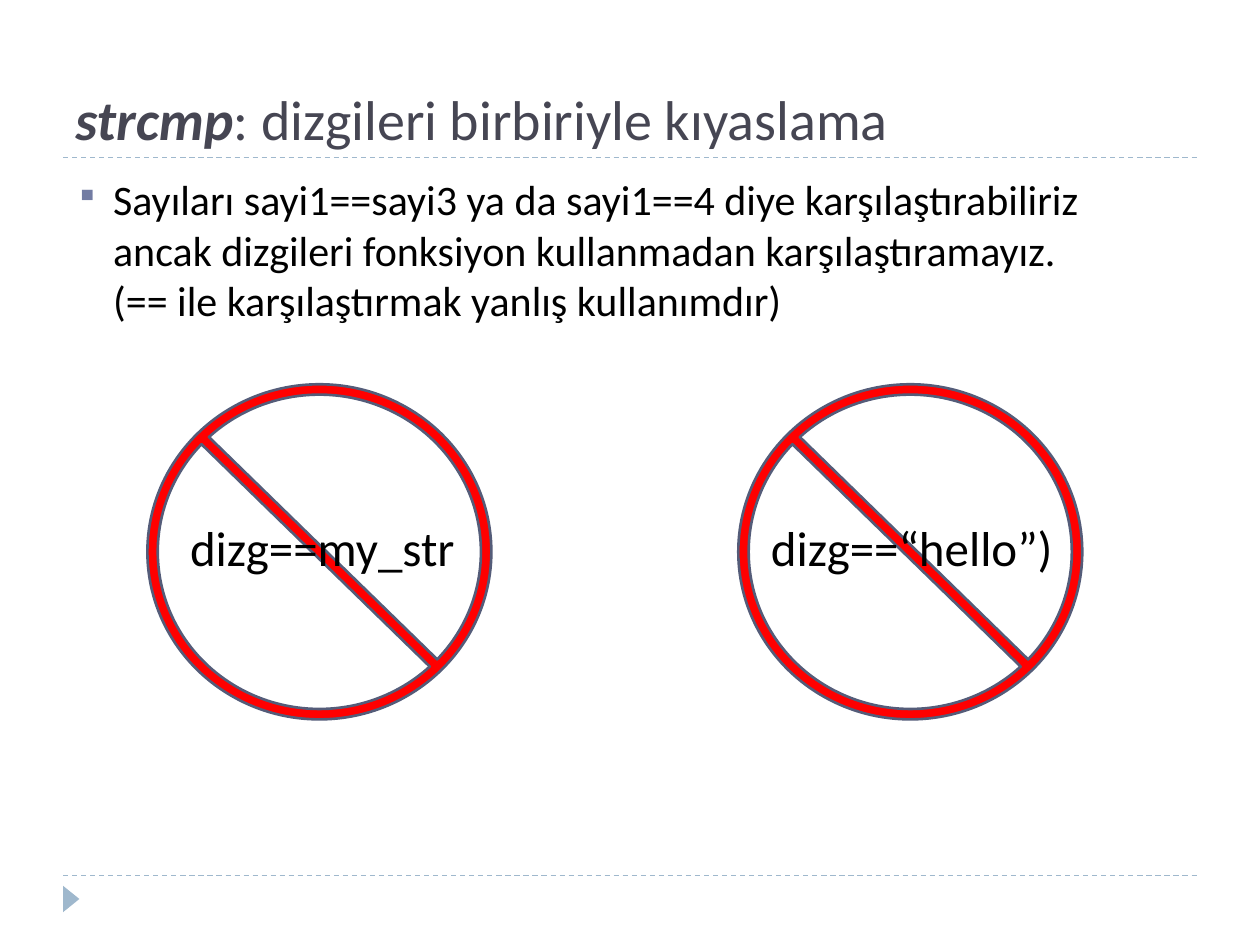
from lxml.etree import SubElement
from pptx import Presentation
from pptx.dml.color import RGBColor
from pptx.enum.dml import MSO_LINE
from pptx.enum.shapes import MSO_CONNECTOR, MSO_SHAPE
from pptx.enum.text import MSO_ANCHOR, MSO_AUTO_SIZE
from pptx.oxml.ns import qn
from pptx.util import Inches, Pt

COLORS = {
    "rule": "9FB8CD",
    "title": "464653",
    "body": "000000",
    "bullet": "727CA3",
    "ban": "FF0000",
    "ban_edge": "545C79",
}


class SlideBuilder:
    font_name = "Calibri"

    def __init__(self, slide):
        self.slide = slide

    def color(self, key):
        return RGBColor.from_string(COLORS[key])

    def rule(self, top):
        rule = self.slide.shapes.add_connector(
            MSO_CONNECTOR.STRAIGHT, Inches(0.5), Inches(top), Inches(9.5), Inches(top))
        rule.line.color.rgb = self.color("rule")
        rule.line.width = Pt(0.75)
        rule.line.dash_style = MSO_LINE.DASH
        SubElement(rule._element.spPr, qn("a:effectLst"))

    def shape(self, kind, box, fill, edge=None):
        shape = self.slide.shapes.add_shape(kind, *map(Inches, box))
        shape.shadow.inherit = False
        shape.fill.solid()
        shape.fill.fore_color.rgb = self.color(fill)
        if edge:
            shape.line.color.rgb = self.color(edge)
            shape.line.width = Pt(1.5)
        else:
            shape.line.fill.background()
        return shape

    def text(self, box, content, size, color="body", wrap=True, anchor=MSO_ANCHOR.TOP):
        frame = self.slide.shapes.add_textbox(*map(Inches, box)).text_frame
        frame.word_wrap = wrap
        frame.auto_size = MSO_AUTO_SIZE.NONE if wrap else MSO_AUTO_SIZE.SHAPE_TO_FIT_TEXT
        frame.vertical_anchor = anchor
        paragraph = frame.paragraphs[0]
        paragraph.text = content
        for run in paragraph.runs:
            self.style(run, size, color)
        return paragraph

    def style(self, run, size, color):
        run.font.name = self.font_name
        run.font.size = Pt(size)
        run.font.color.rgb = self.color(color)

    def title(self, term, rest):
        heading = self.text((0.5, 0.17, 9, 1.08), term, 32, "title", anchor=MSO_ANCHOR.BOTTOM)
        heading.runs[0].font.bold = True
        heading.runs[0].font.italic = True
        explanation = heading.add_run()
        explanation.text = rest
        self.style(explanation, 32, "title")

    def bullet(self, content):
        item = self.text((0.5, 1.33, 9, 5.4), content, 24)
        item.space_before = Pt(6)
        properties = item._p.get_or_add_pPr()
        properties.set("marL", str(Inches(0.3)))
        properties.set("indent", str(-Inches(0.3)))
        bullet_color = SubElement(properties, qn("a:buClr"))
        SubElement(bullet_color, qn("a:srgbClr"), val=COLORS["bullet"])
        SubElement(properties, qn("a:buSzPct"), val="76000")
        SubElement(properties, qn("a:buChar"), char="▪")

    def banned(self, sign_left, text_left, text_width, expression):
        sign = self.shape(MSO_SHAPE.NO_SYMBOL, (sign_left, 3.05, 2.73, 2.66), "ban", "ban_edge")
        sign.adjustments[0] = 0.031
        self.text((text_left, 4.06, text_width, 0.57), expression, 28, wrap=False)


def main():
    presentation = Presentation()
    presentation.slide_width = Inches(10)
    presentation.slide_height = Inches(7.5)
    builder = SlideBuilder(presentation.slides.add_slide(presentation.slide_layouts[6]))

    for top in (6.95, 1.25):
        builder.rule(top)
    page_marker = builder.shape(MSO_SHAPE.ISOSCELES_TRIANGLE, (0.46, 7.07, 0.21, 0.13), "rule")
    page_marker.rotation = 90

    builder.title("strcmp", ": dizgileri birbiriyle kıyaslama")
    builder.bullet(
        "Sayıları sayi1==sayi3 ya da sayi1==4 diye karşılaştırabiliriz "
        "ancak dizgileri fonksiyon kullanmadan karşılaştıramayız.\v"
        "(== ile karşılaştırmak yanlış kullanımdır)")

    builder.banned(1.17, 1.41, 2.32, "dizg==my_str")
    builder.banned(5.86, 6.02, 2.46, "dizg==“hello”)")

    presentation.save("out.pptx")


if __name__ == "__main__":
    main()
